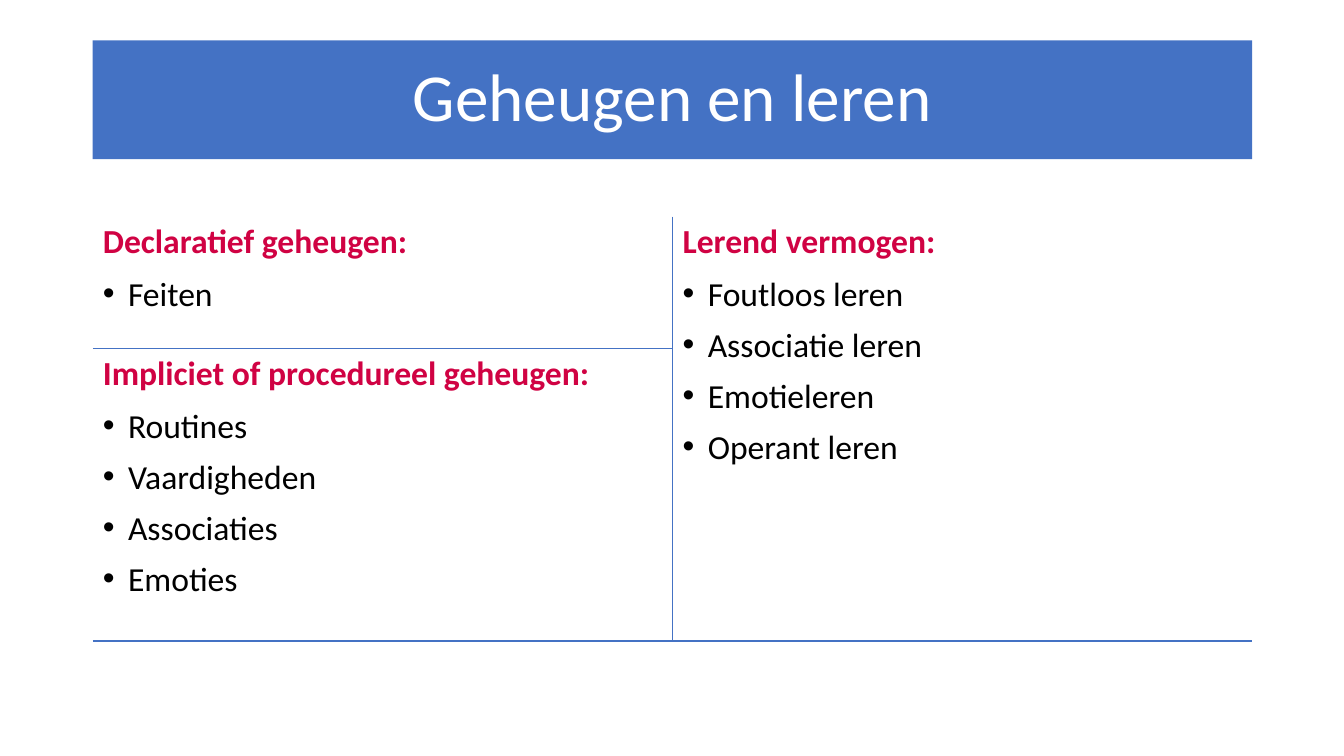
from lxml.etree import SubElement
from pptx import Presentation
from pptx.dml.color import RGBColor
from pptx.enum.shapes import MSO_SHAPE
from pptx.enum.text import MSO_ANCHOR, PP_ALIGN
from pptx.oxml.ns import qn
from pptx.util import Pt

PX = 9144  # 100 px to the inch
FONT = "Calibri"
BLUE = RGBColor(0x44, 0x72, 0xC4)
CRIMSON = RGBColor(0xD0, 0x02, 0x43)
BLACK = RGBColor(0, 0, 0)
WHITE = RGBColor(0xFF, 0xFF, 0xFF)

LEFT, WIDTH = 92, 1150
ROW_HEIGHTS = (131, 290)
BULLET_INDENT = 25

DECLARATIVE = ("Declaratief geheugen:", ["Feiten"])
IMPLICIT = ("Impliciet of procedureel geheugen:",
            ["Routines", "Vaardigheden", "Associaties", "Emoties"])
LEARNING = ("Lerend vermogen:",
            ["Foutloos leren", "Associatie leren", "Emotieleren", "Operant leren"])


def px(length):
    return length * PX


def write(para, text, size=24, color=BLACK, bold=False, align=PP_ALIGN.LEFT,
          line_spacing=1.0, space_before=0):
    para.alignment = align
    para.line_spacing = line_spacing
    para.space_before = Pt(space_before)
    span = para.add_run()
    span.text = text
    span.font.name = FONT
    span.font.size = Pt(size)
    span.font.bold = bold
    span.font.color.rgb = color


def add_bullet(para):
    properties = para._p.get_or_add_pPr()
    properties.set("marL", str(px(BULLET_INDENT)))
    properties.set("indent", str(-px(BULLET_INDENT)))
    bullet_color = SubElement(properties, qn("a:buClr"))
    SubElement(bullet_color, qn("a:srgbClr"), val=str(BLACK))
    SubElement(properties, qn("a:buFont"), typeface="Arial")
    SubElement(properties, qn("a:buChar"), char="•")


def set_borders(cell, drawn_sides):
    """Draw the named sides (letters from LRTB) and clear the others."""
    properties = cell._tc.get_or_add_tcPr()
    for side in "LRTB":
        line = SubElement(properties, qn(f"a:ln{side}"), w=str(Pt(1)))
        if side in drawn_sides:
            fill = SubElement(line, qn("a:solidFill"))
            SubElement(fill, qn("a:srgbClr"), val=str(BLUE))
        else:
            SubElement(line, qn("a:noFill"))
    cell.fill.background()


def fill_cell(cell, heading, items):
    frame = cell.text_frame
    write(frame.paragraphs[0], heading, color=CRIMSON, bold=True)
    for item in items:
        para = frame.add_paragraph()
        write(para, item, line_spacing=0.9, space_before=10)
        add_bullet(para)


def add_title(page, text):
    box = page.shapes.add_shape(MSO_SHAPE.RECTANGLE, px(LEFT), px(40), px(WIDTH), px(118))
    box.shadow.inherit = False
    box.fill.solid()
    box.fill.fore_color.rgb = BLUE
    box.line.fill.background()
    box.text_frame.word_wrap = True
    box.text_frame.vertical_anchor = MSO_ANCHOR.MIDDLE
    write(box.text_frame.paragraphs[0], text, size=48, color=WHITE,
          align=PP_ALIGN.CENTER, line_spacing=0.9)


def add_memory_table(page):
    table = page.shapes.add_table(2, 2, px(LEFT), px(215), px(WIDTH),
                                  px(sum(ROW_HEIGHTS))).table
    table.first_row = False
    table.horz_banding = False
    for row, height in zip(table.rows, ROW_HEIGHTS):
        row.height = px(height)
    for row in range(2):
        set_borders(table.cell(row, 0), "RB" if row == 0 else "RTB")
        set_borders(table.cell(row, 1), "LB" if row == 0 else "LB")
    table.cell(0, 1).merge(table.cell(1, 1))
    fill_cell(table.cell(0, 0), *DECLARATIVE)
    fill_cell(table.cell(1, 0), *IMPLICIT)
    fill_cell(table.cell(0, 1), *LEARNING)


def main():
    deck = Presentation()
    deck.slide_width, deck.slide_height = px(1333), px(750)
    page = deck.slides.add_slide(deck.slide_layouts[6])
    add_title(page, "Geheugen en leren")
    add_memory_table(page)
    deck.save("out.pptx")


if __name__ == "__main__":
    main()
